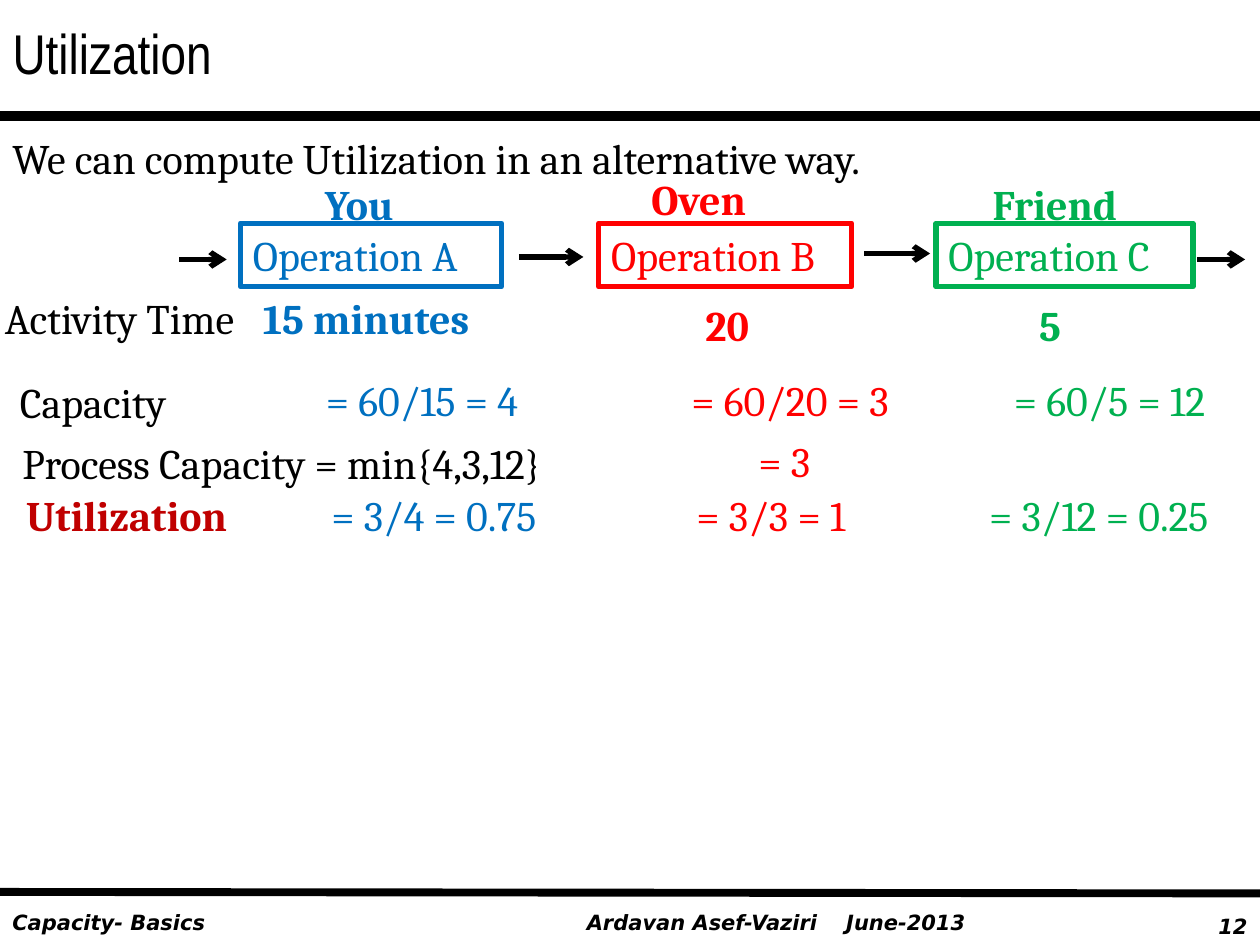
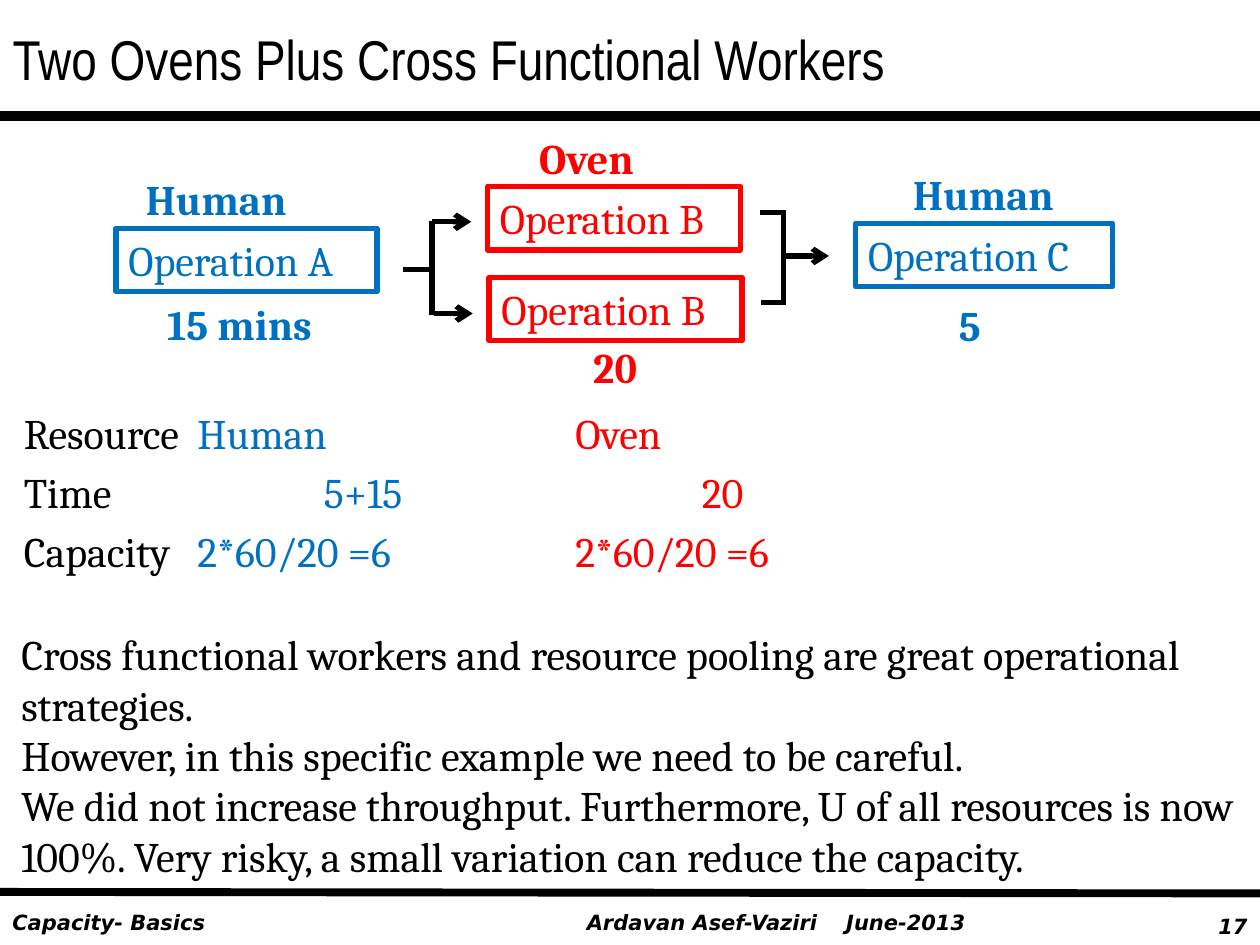
from lxml import etree
from pptx import Presentation
from pptx.dml.color import RGBColor
from pptx.enum import shapes, text
from pptx.oxml import ns
from pptx.util import Cm, Pt

BLACK = RGBColor(0x00, 0x00, 0x00)
BLUE = RGBColor(0x00, 0x70, 0xC0)
RED = RGBColor(0xFF, 0x00, 0x00)
GREEN = RGBColor(0x00, 0xB0, 0x50)
DARK_RED = RGBColor(0xC0, 0x00, 0x00)
TITLE_FONT, BODY_FONT, FOOTER_FONT = "Arial Narrow", "Cambria", "DejaVu Sans"
SLIDE_WIDTH, LINE_HEIGHT = 25.4, 1.28


def add_text(slide, words, left, top, width, colour=BLACK, bold=False, boxed=False, footer=False):
    """Add a text box, or an outlined rectangle if boxed; lengths are in cm."""
    place = Cm(left), Cm(top), Cm(width), Cm(0.77 if footer else LINE_HEIGHT)
    if boxed:
        shape = slide.shapes.add_shape(shapes.MSO_SHAPE.RECTANGLE, *place)
        shape.shadow.inherit = False
        shape.fill.background()
        shape.line.color.rgb = colour
        shape.line.width = Pt(3)
    else:
        shape = slide.shapes.add_textbox(*place)
    frame = shape.text_frame
    frame.word_wrap = True
    frame.vertical_anchor = text.MSO_ANCHOR.TOP
    frame.text = words
    for paragraph in frame.paragraphs:
        paragraph.alignment = text.PP_ALIGN.LEFT
        paragraph.font.name = FOOTER_FONT if footer else BODY_FONT
        paragraph.font.size = Pt(12 if footer else 24)
        paragraph.font.bold = bold or footer
        paragraph.font.italic = footer
        paragraph.font.color.rgb = colour
    return shape


def add_line(slide, x1, y1, x2, y2, arrow=False, weight=3):
    """Add a black line, with an arrowhead at its end if asked; lengths are in cm."""
    line = slide.shapes.add_connector(
        shapes.MSO_CONNECTOR.STRAIGHT, Cm(x1), Cm(y1), Cm(x2), Cm(y2))
    line.line.color.rgb = BLACK
    line.line.width = Pt(weight)
    properties = line.element.spPr
    if arrow:
        etree.SubElement(properties.find(ns.qn("a:ln")), ns.qn("a:tailEnd"), type="arrow")
    etree.SubElement(properties, ns.qn("a:effectLst"))
    return line


presentation = Presentation()
presentation.slide_width = Cm(SLIDE_WIDTH)
presentation.slide_height = Cm(19.05)
layout = presentation.slide_layouts.get_by_name("Title Only")

# Titles and slide numbers
slides = []
for title_words, title_height, number in [
    ("Utilization", 2.1, "12"),
    ("Two Ovens Plus Cross Functional Workers", 2.34, "17"),
]:
    slide = presentation.slides.add_slide(layout)
    title = slide.shapes.title
    title.left, title.top = Cm(0), Cm(0)
    title.width, title.height = Cm(SLIDE_WIDTH), Cm(title_height)
    title.text_frame.text = title_words
    title.text_frame.vertical_anchor = text.MSO_ANCHOR.MIDDLE
    paragraph = title.text_frame.paragraphs[0]
    paragraph.alignment = text.PP_ALIGN.LEFT
    paragraph.font.name = TITLE_FONT
    paragraph.font.size = Pt(32)
    paragraph.font.color.rgb = BLACK
    page = add_text(slide, number, 23.5, 18.29, 1.9, footer=True)
    page.text_frame.paragraphs[0].alignment = text.PP_ALIGN.RIGHT
    slides.append(slide)
utilization, pooling = slides

# Rules and footer are drawn once and moved to the shared layout
for part in [
    add_line(utilization, 0, 2.34, SLIDE_WIDTH, 2.34, weight=6),
    add_line(utilization, 0, 17.98, SLIDE_WIDTH, 18.01, weight=4.5),
    add_text(utilization, "Capacity- Basics", 0, 18.21, 11.5, footer=True),
    add_text(utilization, "Ardavan Asef-Vaziri", 11.58, 18.21, 5.2, footer=True),
    add_text(utilization, "June-2013", 16.81, 18.21, 3.3, footer=True),
]:
    layout.shapes.element.append(part.element)

# Slide 1: three operations in a row
for words, left, top, width in [
    ("We can compute Utilization in an alternative way.", 0, 2.54, SLIDE_WIDTH),
    ("Activity Time", -0.15, 5.77, 6.63),
    ("Capacity", 0.15, 7.47, 6.63),
    ("Process Capacity = min{4,3,12}", 0.2, 8.69, 14.63),
]:
    add_text(utilization, words, left, top, width)
add_text(utilization, "= 3", 15.04, 8.66, 1.7, RED)
add_text(utilization, "Utilization", 0.28, 9.75, 7.24, DARK_RED, bold=True)

for colour, role, operation, minutes, capacity, usage in [
    (BLUE, ("You", 6.3, 3.48, 2.08), ("Operation A", 4.85, 4.5, 5.26),
     ("15 minutes", 5.05, 5.77, 5.08), ("= 60/15 = 4", 6.32, 7.42, 4.85),
     ("= 3/4 = 0.75", 6.43, 9.75, 5.05)),
    (RED, ("Oven", 12.88, 3.38, 2.64), ("Operation B", 12.07, 4.5, 5.1),
     ("20", 13.97, 5.92, 1.45), ("= 60/20 = 3", 13.69, 7.42, 4.85),
     ("= 3/3 = 1", 13.79, 9.75, 3.99)),
    (GREEN, ("Friend", 19.76, 3.48, 3.07), ("Operation C", 18.87, 4.5, 5.18),
     ("5", 20.7, 5.92, 1.02), ("= 60/5 = 12", 20.19, 7.42, 4.85),
     ("= 3/12 = 0.25", 19.69, 9.75, 5.49)),
]:
    add_text(utilization, *role, colour, bold=True)
    add_text(utilization, *operation, colour, boxed=True)
    add_text(utilization, *minutes, colour, bold=True)
    add_text(utilization, *capacity, colour)
    add_text(utilization, *usage, colour)

for start, end, height in [
    (3.61, 4.57, 5.23), (10.46, 11.76, 5.18), (17.42, 18.75, 5.11), (24.13, 25.1, 5.23),
]:
    add_line(utilization, start, height, end, height, arrow=True)

# Slide 2: two ovens between the human steps
for colour, role, operations, minutes in [
    (BLUE, ("Human", 2.69, 3.38, 3.45), [("Operation A", 2.34, 4.6, 5.26)],
     ("15 mins", 3.12, 5.89, 3.53)),
    (RED, ("Oven", 10.62, 2.54, 2.64),
     [("Operation B", 9.83, 3.76, 5.1), ("Operation B", 9.86, 5.59, 5.1)],
     ("20", 11.71, 6.76, 1.45)),
    (BLUE, ("Human", 18.16, 3.28, 3.45), [("Operation C", 17.25, 4.5, 5.18)],
     ("5", 19.08, 5.92, 0.94)),
]:
    add_text(pooling, *role, colour, bold=True)
    for operation in operations:
        add_text(pooling, *operation, colour, boxed=True)
    add_text(pooling, *minutes, colour, bold=True)

for x1, y1, x2, y2, arrow in [
    (8.13, 5.44, 8.74, 5.44, False),     # fork to the ovens
    (8.71, 4.45, 8.71, 6.35, False),
    (8.71, 4.47, 9.5, 4.47, True),
    (8.74, 6.32, 9.53, 6.32, True),
    (15.32, 4.29, 15.82, 4.29, False),   # join after the ovens
    (15.34, 6.1, 15.85, 6.1, False),
    (15.8, 4.24, 15.8, 6.15, False),
    (15.75, 5.16, 16.71, 5.16, True),
]:
    add_line(pooling, x1, y1, x2, y2, arrow)

# Resource summary, aligned by tab stops
summary = pooling.shapes.add_textbox(Cm(0.23), Cm(8.1), Cm(24.94), Cm(4.01))
summary.text_frame.word_wrap = True
for index, (cells, stops) in enumerate([
    (("Resource", "Human", "Oven"), (3.5, 11.12)),
    (("Time", "5+15", "20"), (6.05, 13.67)),
    (("Capacity", "2*60/20 =6", "2*60/20 =6"), (3.5, 11.12)),
]):
    paragraph = summary.text_frame.paragraphs[0] if index == 0 else summary.text_frame.add_paragraph()
    if index:
        paragraph.space_before = Pt(4.8)
    tabs = etree.SubElement(paragraph._p.get_or_add_pPr(), ns.qn("a:tabLst"))
    for stop in stops:
        etree.SubElement(tabs, ns.qn("a:tab"), pos=str(Cm(stop)), algn="l")
    paragraph.font.name = BODY_FONT
    paragraph.font.size = Pt(24)
    for column, (cell, colour) in enumerate(zip(cells, (BLACK, BLUE, RED))):
        run = paragraph.add_run()
        run.text = "\t" + cell if column else cell
        run.font.color.rgb = colour

conclusion = add_text(pooling, "\n".join([
    "Cross functional workers and resource pooling are great operational strategies.",
    "However, in this specific example we need to be careful.",
    "We did not increase throughput. Furthermore, U of all resources is now 100%. "
    "Very risky, a small variation can reduce the capacity.",
]), 0.18, 12.55, 25.2)
conclusion.height = Cm(5.38)

presentation.save("out.pptx")
